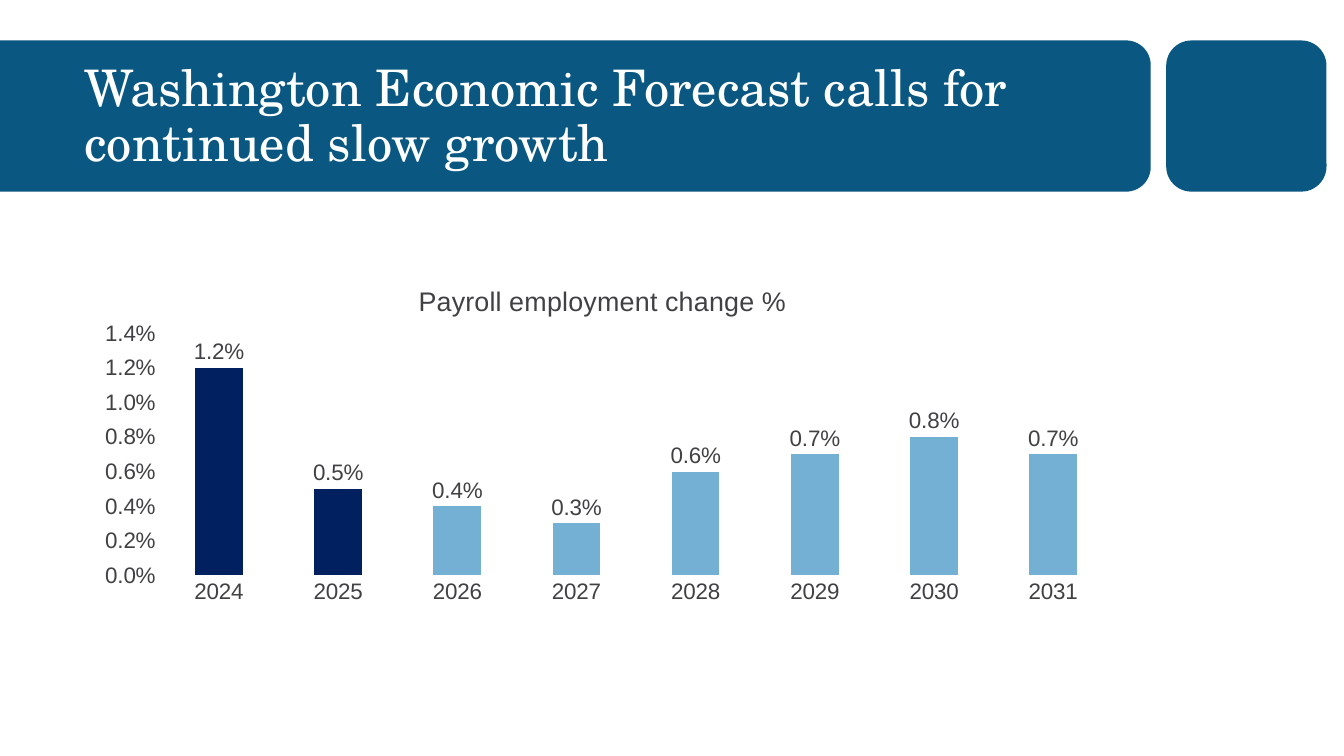
from math import cos, pi, sin

from lxml import etree
from pptx import Presentation
from pptx.chart.data import CategoryChartData
from pptx.dml.color import RGBColor
from pptx.enum.chart import XL_CHART_TYPE as ChartType
from pptx.enum.chart import XL_LABEL_POSITION as LabelPosition
from pptx.enum.chart import XL_TICK_MARK as TickMark
from pptx.enum.shapes import MSO_SHAPE as Shape
from pptx.enum.text import MSO_ANCHOR as Anchor
from pptx.oxml.ns import qn
from pptx.util import Cm, Pt

COLORS = {
    "banner": "0A5882",
    "white": "FFFFFF",
    "text": "404144",
    "actual": "002060",
    "forecast": "74AFD4",
}


class ForecastSlide:
    title_font = "TeX Gyre Schola"
    body_font = "Arial"

    def __init__(self, presentation):
        self.slide = presentation.slides.add_slide(presentation.slide_layouts[6])

    def color(self, name):
        return RGBColor.from_string(COLORS[name])

    def paint(self, fill, name):
        fill.solid()
        fill.fore_color.rgb = self.color(name)

    def style_font(self, font, size, name="text", family=None):
        font.size = Pt(size)
        font.bold = False
        font.name = family or self.body_font
        font.color.rgb = self.color(name)

    def finish(self, shape):
        shape.shadow.inherit = False
        self.paint(shape.fill, "banner")
        shape.line.fill.background()

    def banner(self, top, width, height, radius, steps=16):
        """Bar from the left slide edge with rounded right corners."""
        points = []
        for center_y, start in ((top + radius, -pi / 2), (top + height - radius, 0)):
            for step in range(steps + 1):
                angle = start + step / steps * pi / 2
                points.append((Cm(width - radius + radius * cos(angle)),
                               Cm(center_y + radius * sin(angle))))
        points.append((0, Cm(top + height)))
        builder = self.slide.shapes.build_freeform(0, Cm(top), scale=1.0)
        builder.add_line_segments(points, close=True)
        self.finish(builder.convert_to_shape())

    def rounded_box(self, left, top, width, height):
        self.finish(self.slide.shapes.add_shape(
            Shape.ROUNDED_RECTANGLE, Cm(left), Cm(top), Cm(width), Cm(height)))

    def title(self, text, left, top, width, height):
        box = self.slide.shapes.add_textbox(Cm(left), Cm(top), Cm(width), Cm(height))
        text_frame = box.text_frame
        text_frame.word_wrap = True
        text_frame.vertical_anchor = Anchor.MIDDLE
        text_frame.text = text
        paragraph = text_frame.paragraphs[0]
        paragraph.line_spacing = 0.9
        self.style_font(paragraph.runs[0].font, 36, "white", self.title_font)

    def place(self, parent, **values):
        """Give a chart title or plot area a manual layout."""
        layout = parent.find(qn("c:layout"))
        if layout is None:
            layout = etree.Element(qn("c:layout"))
            text = parent.find(qn("c:tx"))
            parent.insert(0 if text is None else 1, layout)
        manual = etree.SubElement(layout, qn("c:manualLayout"))
        for tag, value in values.items():
            etree.SubElement(manual, qn("c:" + tag)).set("val", str(value))

    def column_chart(self, title, categories, values, actual_count,
                     left, top, width, height):
        data = CategoryChartData(number_format="0.0%")
        data.categories = categories
        data.add_series("Series 1", values)
        chart = self.slide.shapes.add_chart(
            ChartType.COLUMN_CLUSTERED,
            Cm(left), Cm(top), Cm(width), Cm(height), data).chart
        self.style_font(chart.font, 16)
        chart.has_legend = False

        # Chart title
        chart.has_title = True
        text_frame = chart.chart_title.text_frame
        text_frame.text = title
        self.style_font(text_frame.paragraphs[0].runs[0].font, 19.2)
        self.place(chart.chart_title._element,
                   xMode="edge", yMode="edge", x=0.32, y=0.05)

        # Axes
        for axis in (chart.category_axis, chart.value_axis):
            axis.major_tick_mark = axis.minor_tick_mark = TickMark.NONE
            self.style_font(axis.tick_labels.font, 16)
        value_axis = chart.value_axis
        value_axis.minimum_scale, value_axis.maximum_scale = 0, 0.014
        value_axis.major_unit = 0.002
        value_axis.tick_labels.number_format = "0.0%"
        value_axis.tick_labels.number_format_is_linked = False
        value_axis.format.line.fill.background()
        for line in (chart.category_axis.format.line,
                     value_axis.major_gridlines.format.line):
            line.color.rgb = self.color("white")
            line.width = Pt(0.75)

        # Columns and labels
        plot = chart.plots[0]
        plot.gap_width = 150
        plot.vary_by_categories = False
        series = plot.series[0]
        self.paint(series.format.fill, "actual")
        for index in range(actual_count, len(values)):
            self.paint(series.points[index].format.fill, "forecast")
        labels = series.data_labels
        labels.show_value = True
        labels.position = LabelPosition.OUTSIDE_END
        labels.number_format = "0.0%"
        labels.number_format_is_linked = False
        self.style_font(labels.font, 16)
        self.place(chart._chartSpace.chart.plotArea, layoutTarget="inner",
                   xMode="edge", yMode="edge", x=0.08, y=0.19, w=0.9, h=0.61)


def main():
    presentation = Presentation()
    presentation.slide_width, presentation.slide_height = Cm(33.87), Cm(19.05)
    slide = ForecastSlide(presentation)

    # Header
    slide.banner(top=1.02, width=29.0, height=3.81, radius=0.62)
    slide.rounded_box(left=29.39, top=1.02, width=4.04, height=3.81)
    slide.title("Washington Economic Forecast calls for continued slow growth",
                left=1.88, top=1.47, width=26.7, height=3)

    # Employment chart
    slide.column_chart(
        "Payroll employment change %",
        [str(year) for year in range(2024, 2032)],
        [0.012, 0.005, 0.004, 0.003, 0.006, 0.007, 0.008, 0.007],
        actual_count=2, left=1.88, top=6.5, width=26.7, height=10)

    presentation.save("out.pptx")


if __name__ == "__main__":
    main()
